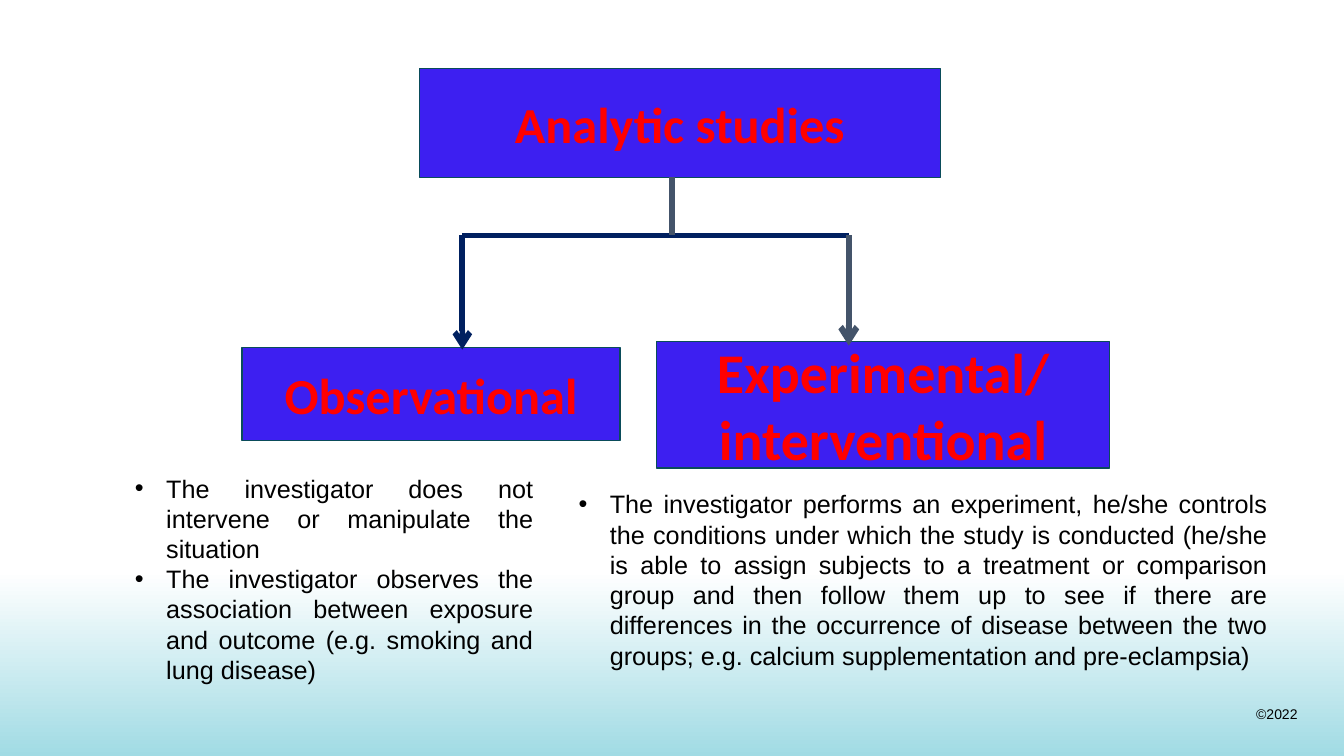
import pptx
import pptx.dml.color
import pptx.enum.shapes
import pptx.enum.text
import pptx.oxml
import pptx.oxml.ns
import pptx.util

Cm = pptx.util.Cm
Pt = pptx.util.Pt
Align = pptx.enum.text.PP_ALIGN
Anchor = pptx.enum.text.MSO_ANCHOR
RECTANGLE = pptx.enum.shapes.MSO_SHAPE.RECTANGLE
STRAIGHT = pptx.enum.shapes.MSO_CONNECTOR.STRAIGHT


def color(value):
    return pptx.dml.color.RGBColor.from_string(value)


def add_element(parent, tag, **attributes):
    element = pptx.oxml.parse_xml(f"<{tag} {pptx.oxml.ns.nsdecls('a')}/>")
    for name, value in attributes.items():
        element.set(name, str(value))
    parent.append(element)


def write(para, text, font="Arial", size=18, ink="000000", bold=False, align=Align.LEFT):
    para.alignment = align
    span = para.add_run()
    span.text = text
    span.font.name = font
    span.font.size = Pt(size)
    span.font.bold = bold
    span.font.color.rgb = color(ink)


class StudyPage:
    """Draws the elements of one slide in a shared style."""

    box_fill = "3D1FF1"
    box_line = "0A4C5A"
    box_ink = "FF0000"
    navy = "002060"
    slate = "44546A"

    def __init__(self, deck):
        self.deck = deck
        self.page = deck.slides.add_slide(deck.slide_layouts[5])
        self.shapes = self.page.shapes

    def fade(self, top, height, start, end):
        band = self.shapes.add_shape(RECTANGLE, 0, Cm(top), self.deck.slide_width, Cm(height))
        band.shadow.inherit = False
        band.line.fill.background()
        band.fill.gradient()
        band.fill.gradient_angle = 270
        for stop, position, shade in zip(band.fill.gradient_stops, (0, 1), (start, end)):
            stop.position = position
            stop.color.rgb = color(shade)

    def style_box(self, box, text, size):
        box.fill.solid()
        box.fill.fore_color.rgb = color(self.box_fill)
        box.line.color.rgb = color(self.box_line)
        box.line.width = Pt(1)
        frame = box.text_frame
        frame.word_wrap = True
        frame.auto_size = pptx.enum.text.MSO_AUTO_SIZE.NONE
        frame.vertical_anchor = Anchor.MIDDLE
        write(frame.paragraphs[0], text, font="Calibri", size=size, ink=self.box_ink,
              bold=True, align=Align.CENTER)

    def title(self, text, left, top, width, height, size=36):
        box = self.shapes.title
        box.left, box.top, box.width, box.height = map(Cm, (left, top, width, height))
        self.style_box(box, text, size)

    def study_box(self, text, left, top, width, height, size=36):
        box = self.shapes.add_shape(RECTANGLE, *map(Cm, (left, top, width, height)))
        box.shadow.inherit = False
        self.style_box(box, text, size)

    def line(self, start, end, ink, width, arrow=False):
        connector = self.shapes.add_connector(STRAIGHT, *map(Cm, start + end))
        connector.line.color.rgb = color(ink)
        connector.line.width = Pt(width)
        if arrow:
            add_element(connector.line._get_or_add_ln(), "a:tailEnd", type="arrow")
        add_element(connector._element.spPr, "a:effectLst")

    def text_box(self, left, top, width, height, wrap=True):
        box = self.shapes.add_textbox(*map(Cm, (left, top, width, height)))
        box.text_frame.word_wrap = wrap
        return box.text_frame

    def bullets(self, texts, left, top, width, height):
        frame = self.text_box(left, top, width, height)
        for index, text in enumerate(texts):
            para = frame.add_paragraph() if index else frame.paragraphs[0]
            write(para, text, align=Align.JUSTIFY)
            properties = para._p.get_or_add_pPr()
            properties.set("marL", str(Cm(0.79)))
            properties.set("indent", str(-Cm(0.79)))
            add_element(properties, "a:buFont", typeface="Arial")
            add_element(properties, "a:buChar", char="•")

    def footer(self, text, left, top, width, height):
        frame = self.text_box(left, top, width, height, wrap=False)
        write(frame.paragraphs[0], text, size=10, align=Align.RIGHT)


def main():
    deck = pptx.Presentation()
    deck.slide_width = Cm(33.87)
    deck.slide_height = Cm(19.05)
    page = StudyPage(deck)

    page.fade(14.4, 4.65, "FFFFFF", "A1DBE4")
    page.footer("©2022", 31.4, 17.65, 1.55, 0.69)

    page.title("Analytic studies", 10.57, 1.73, 13.13, 2.74)
    page.study_box("Observational", 6.1, 8.76, 9.53, 2.34)
    page.study_box("Experimental/ interventional", 16.54, 8.61, 11.43, 3.18, size=40)

    left, middle, right, fork = 11.65, 16.94, 21.39, 5.93
    page.line((left, fork), (right, fork), page.navy, 3.25)
    page.line((left, fork), (left, 8.81), page.navy, 4, arrow=True)
    page.line((right, fork), (right, 8.71), page.slate, 4.25, arrow=True)
    page.line((middle, 4.45), (middle, fork), page.slate, 4.25)

    page.bullets([
        "The investigator does not intervene or manipulate the situation",
        "The investigator observes the association between exposure and outcome "
        "(e.g. smoking and lung disease)",
    ], 3.15, 11.79, 10.54, 5.64)
    page.bullets([
        "The investigator performs an experiment, he/she controls the conditions under which "
        "the study is conducted (he/she is able to assign subjects to a treatment or comparison "
        "group and then follow them up to see if there are differences in the occurrence of "
        "disease between the two groups; e.g. calcium supplementation and pre-eclampsia)",
    ], 14.33, 12.19, 17.86, 4.88)

    deck.save("out.pptx")


if __name__ == "__main__":
    main()
